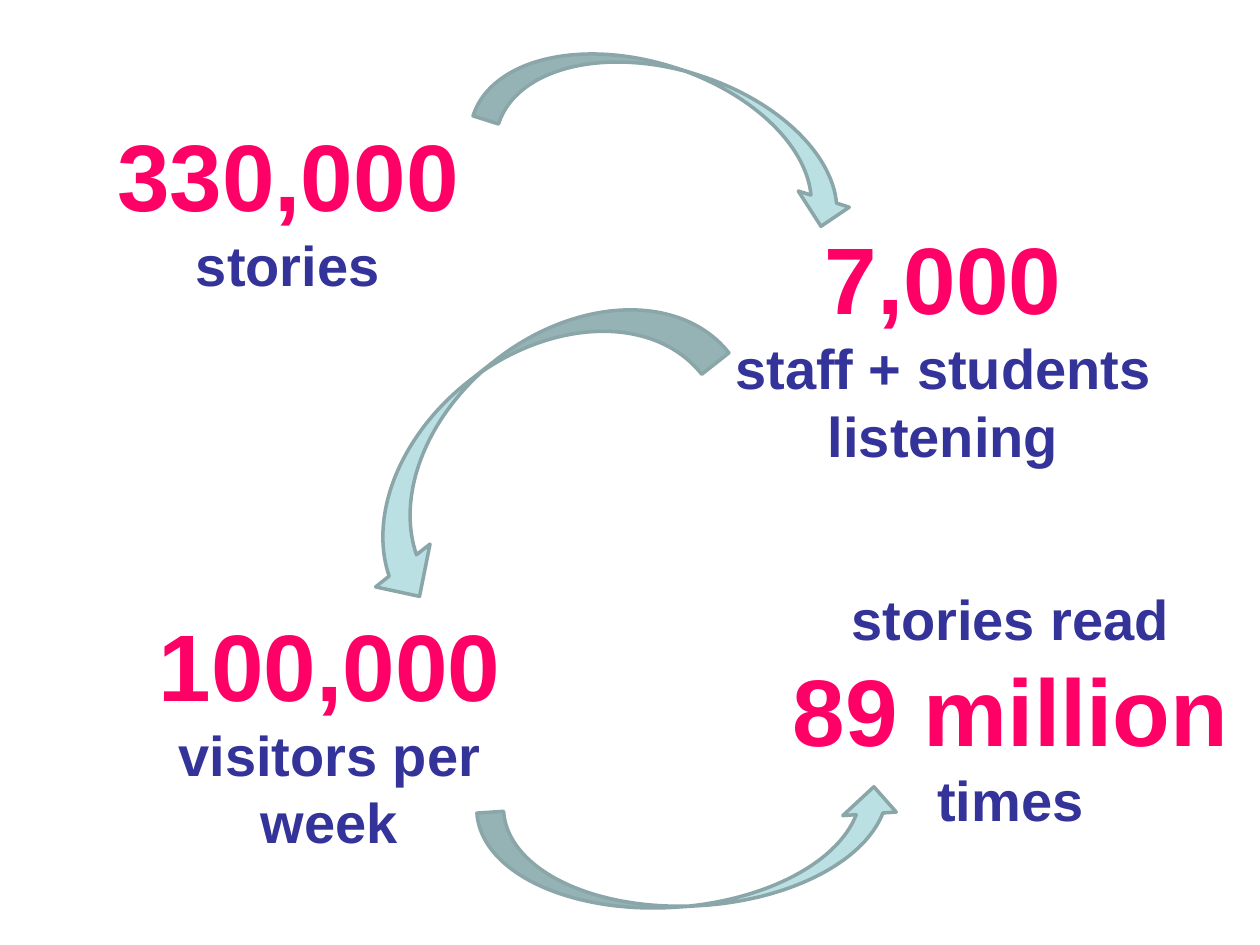
from pptx import Presentation
from pptx.dml.color import RGBColor
from pptx.enum import shapes, text
from pptx.util import Inches, Pt

PINK = RGBColor(0xFF, 0x00, 0x66)
NAVY = RGBColor(0x33, 0x33, 0x99)
AQUA = RGBColor(0xBB, 0xE0, 0xE3)
AQUA_EDGE = RGBColor(0x8A, 0xA6, 0xA8)

# Text styles: size in points, colour
FIGURE = (54, PINK)
LABEL = (32, NAVY)

# Position (left, top, width, height) and styled lines
STATS = [
    ((0.59, 0.88, 3.39, 1.55), [("330,000", FIGURE), ("stories", LABEL)]),
    ((0.92, 4.77, 3.39, 2.09), [("100,000", FIGURE), ("visitors per week", LABEL)]),
    ((6.16, 4.59, 3.72, 2.09),
     [("stories read", LABEL), ("89 million", FIGURE), ("times", LABEL)]),
    ((5.24, 1.7, 4.49, 2.09), [("7,000", FIGURE), ("staff + students listening", LABEL)]),
]

# Position, rotation, flip attribute
ARROWS = [
    ((4.94, -0.57, 0.85, 3.11), 287.6, None),
    ((5.07, 5.08, 0.85, 3.37), 86.2, "flipV"),
    ((3.56, 1.72, 1.1, 3.4), 51.8, "flipH"),
]


def add_stat(slide, box, lines):
    tf = slide.shapes.add_textbox(*map(Inches, box)).text_frame
    tf.word_wrap = True
    tf.auto_size = text.MSO_AUTO_SIZE.SHAPE_TO_FIT_TEXT
    tf.text = "\n".join(line for line, _ in lines)
    for p, (_, (size, color)) in zip(tf.paragraphs, lines):
        p.alignment = text.PP_ALIGN.CENTER
        font = p.runs[0].font
        font.name = "Arial"
        font.size = Pt(size)
        font.bold = True
        font.color.rgb = color


def add_arrow(slide, box, rotation, flip):
    sp = slide.shapes.add_shape(
        shapes.MSO_SHAPE.CURVED_LEFT_ARROW, *map(Inches, box))
    sp.rotation = rotation
    if flip:
        sp.element.spPr.xfrm.set(flip, "1")
    sp.shadow.inherit = False
    sp.fill.solid()
    sp.fill.fore_color.rgb = AQUA
    sp.line.color.rgb = AQUA_EDGE
    sp.line.width = Pt(2)


def main():
    prs = Presentation()
    prs.slide_width, prs.slide_height = Inches(10), Inches(7.5)
    slide = prs.slides.add_slide(prs.slide_layouts[6])

    # Figures with their labels
    for box, lines in STATS:
        add_stat(slide, box, lines)

    # Curved arrows linking one figure to the next
    for box, rotation, flip in ARROWS:
        add_arrow(slide, box, rotation, flip)

    prs.save("out.pptx")


if __name__ == "__main__":
    main()
